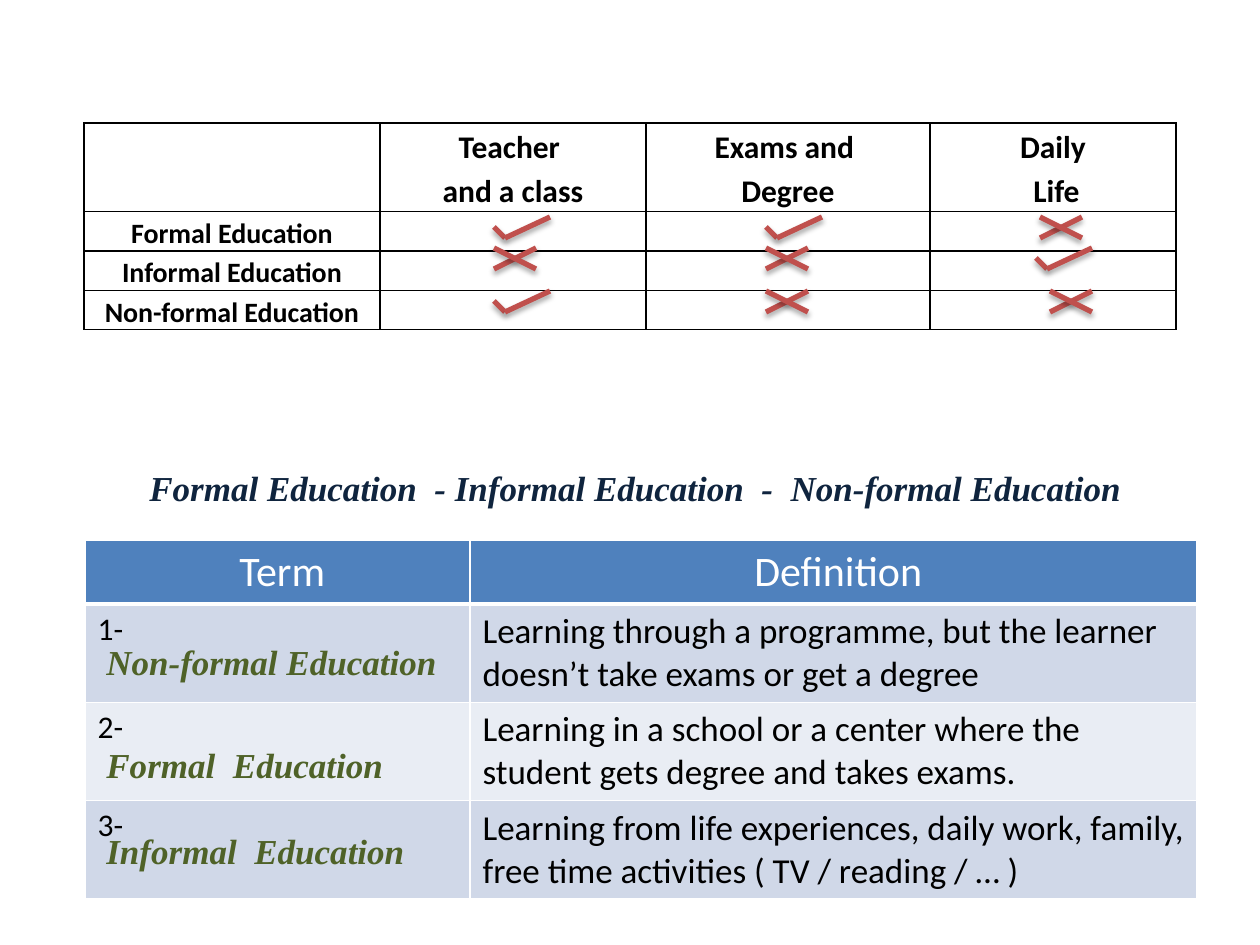
from dataclasses import dataclass
from itertools import pairwise

from lxml import etree
from pptx import Presentation
from pptx import util as u
from pptx.dml.color import RGBColor
from pptx.enum import shapes, text
from pptx.oxml import parse_xml
from pptx.oxml.ns import nsdecls, qn

SCALE = 914400 / 126
MID = text.PP_ALIGN.CENTER
LEFT = text.PP_ALIGN.LEFT


@dataclass(frozen=True)
class Theme:
    body: str = "Calibri"
    serif: str = "Times New Roman"
    black: str = "000000"
    white: str = "FFFFFF"
    blue: str = "4F81BD"
    bands: tuple = ("D0D8E8", "E9EDF4")
    navy: str = "0F243E"
    green: str = "4F6228"
    red: str = "C0504D"
    head: int = 24
    term: int = 20
    text: int = 18
    small: int = 16


def px(n):
    return u.Emu(round(n * SCALE))


def put(item, values):
    for key, value in values.items():
        setattr(item, key, value)


def edge(cell, side, color, width):
    """Add one border; sides go in the order L, R, T, B."""
    line = etree.SubElement(cell._tc.get_or_add_tcPr(), qn(f"a:ln{side}"), w=str(u.Pt(width)))
    fill = etree.SubElement(line, qn("a:solidFill"))
    etree.SubElement(fill, qn("a:srgbClr"), val=color)


class Page:
    def __init__(self, slide, theme):
        self.slide = slide
        self.theme = theme

    def words(self, frame, lines, size, color, align=LEFT, space=None, **font):
        for i, line in enumerate(lines):
            para = frame.paragraphs[0] if i == 0 else frame.add_paragraph()
            put(para, {"alignment": align, "line_spacing": space})
            run = para.add_run()
            run.text = line
            put(run.font, {"name": self.theme.body, "size": u.Pt(size), **font})
            run.font.color.rgb = RGBColor.from_string(color)

    def label(self, x, y, wide, line, color, align=LEFT):
        box = self.slide.shapes.add_textbox(px(x), px(y), px(wide), px(55))
        put(box.text_frame, {"word_wrap": True,
                             "auto_size": text.MSO_AUTO_SIZE.SHAPE_TO_FIT_TEXT})
        self.words(box.text_frame, [line], self.theme.term, color, align,
                   name=self.theme.serif, bold=True, italic=True)

    def table(self, x, y, cols, rows):
        frame = self.slide.shapes.add_table(
            len(rows), len(cols), px(x), px(y), px(sum(cols)), px(sum(rows)))
        grid = frame.table
        put(grid, {"first_row": False, "horz_banding": False})
        for col, wide in zip(grid.columns, cols):
            col.width = px(wide)
        for row, tall in zip(grid.rows, rows):
            row.height = px(tall)
        return grid

    def paint(self, cell, color, fill=None, base=1):
        for side in "LRTB":
            edge(cell, side, color, base if side == "B" else 1)
        if fill:
            cell.fill.solid()
            cell.fill.fore_color.rgb = RGBColor.from_string(fill)
        else:
            cell.fill.background()

    def mark(self, x, y, strokes):
        group = self.slide.shapes.add_group_shape()
        for (ax, ay), (bx, by) in strokes:
            line = group.shapes.add_connector(
                shapes.MSO_CONNECTOR.STRAIGHT, px(x + ax), px(y + ay), px(x + bx), px(y + by))
            line.line.width = u.Pt(3)
            line.line.color.rgb = RGBColor.from_string(self.theme.red)
            line._element.spPr.append(parse_xml(
                f'<a:effectLst {nsdecls("a")}><a:outerShdw blurRad="{u.Pt(3.1)}" '
                f'dist="{u.Pt(1.8)}" dir="5400000" rotWithShape="0">'
                f'<a:srgbClr val="{self.theme.black}"><a:alpha val="35000"/></a:srgbClr>'
                '</a:outerShdw></a:effectLst>'))


TICK = list(pairwise([(0, 10), (11, 21), (56, 0)]))
CROSS = [((42, 0), (0, 21)), ((0, 0), (42, 21))]
MARKS = [
    (217, [(494, TICK), (766, TICK), (1040, CROSS)]),
    (248, [(494, CROSS), (766, CROSS), (1036, TICK)]),
    (291, [(494, TICK), (766, CROSS), (1050, CROSS)]),
]
TRAITS = [
    [[], ["Teacher ", "and a class"], ["Exams and ", "Degree"], ["Daily", " Life"]],
    [["Formal Education"], [], [], []],
    [["Informal Education"], [], [], []],
    [["Non-formal Education"], [], [], []],
]
TERMS = [
    (" Term", " Definition"),
    ("1-", "Learning through a programme, but the learner doesn’t take exams or get a degree"),
    ("2-", "Learning in a school or a center where the student gets degree and takes exams."),
    ("3-", "Learning from life experiences, daily work, family, "
           "free time activities ( TV / reading / … )"),
]
ANSWERS = [(634, "Non-formal Education"), (737, "Formal  Education"), (823, "Informal  Education")]


def compare(page):
    theme = page.theme
    grid = page.table(84, 123, [296, 266, 284, 246], [88, 39, 39, 39])
    pad = {"margin_left": px(9), "margin_right": px(9), "margin_top": 0, "margin_bottom": 0}
    for r, row in enumerate(TRAITS):
        for c, lines in enumerate(row):
            cell = grid.cell(r, c)
            put(cell, pad)
            page.paint(cell, theme.black)
            size = theme.small if r else theme.text
            page.words(cell.text_frame, lines, size, theme.black, MID, 1.15, bold=True)
    for y, row in MARKS:
        for x, strokes in row:
            page.mark(x, y, strokes)


def define(page):
    theme = page.theme
    grid = page.table(85, 540, [385, 727], [63, 98, 98, 98])
    for r, row in enumerate(TERMS):
        for c, line in enumerate(row):
            cell = grid.cell(r, c)
            if r == 0:
                page.paint(cell, theme.white, theme.blue, 3)
                page.words(cell.text_frame, [line], theme.head, theme.white, MID)
            else:
                page.paint(cell, theme.white, theme.bands[(r - 1) % 2])
                size = theme.term if c else theme.text
                page.words(cell.text_frame, [line], size, theme.black)
    page.label(105, 460, 1061, "Formal Education  - Informal Education  -  Non-formal Education",
               theme.navy, MID)
    for y, line in ANSWERS:
        page.label(94, y, 378, line, theme.green)


def main():
    deck = Presentation()
    put(deck, {"slide_width": px(1260), "slide_height": px(945)})
    page = Page(deck.slides.add_slide(deck.slide_layouts[6]), Theme())
    compare(page)
    define(page)
    deck.save("out.pptx")


if __name__ == "__main__":
    main()
